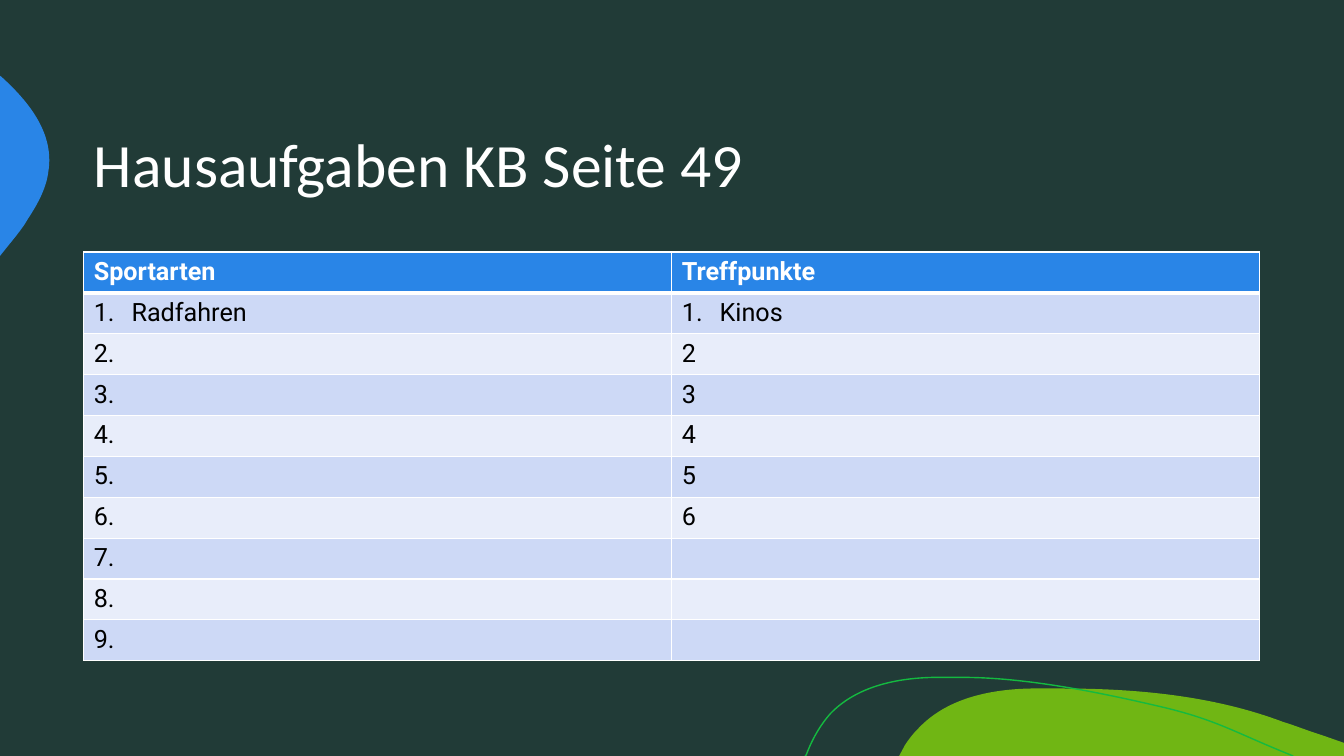
from lxml import etree
from pptx import Presentation
from pptx.dml.color import RGBColor
from pptx.enum.text import MSO_ANCHOR, MSO_AUTO_SIZE, PP_ALIGN
from pptx.oxml.ns import qn
from pptx.util import Cm, Pt

MIDDLE = MSO_ANCHOR.MIDDLE
NO_FIT = MSO_AUTO_SIZE.NONE
LEFT = PP_ALIGN.LEFT
TITLE_ONLY = 5
MARGIN = 2.11
CONTENT_WIDTH = 29.64
ROW_HEIGHT = 1.03

WHITE, BLACK = "FFFFFF", "000000"
DARK_GREEN, LIME, GREEN = "213B37", "70B614", "14BA40"
BLUE, BAND_DARK, BAND_LIGHT = "2985E7", "CDD9F6", "E8EDFA"

HEADER = ("Sportarten", "Treffpunkte")
FIRST_ENTRIES = ("Radfahren", "Kinos")
LAST_NUMBERS = (9, 6)
NUMBER_ENDINGS = (".", "")

LIME_HILL = [
    (26.77, 17.35), (28.65, 17.35, 30.58, 17.53, 32.33, 18.19),
    (32.66, 18.29, 32.97, 18.42, 33.3, 18.52), (33.87, 18.72),
    (33.87, 19.05), (22.66, 19.05), (22.81, 18.77),
    (22.91, 18.62, 23.01, 18.49, 23.14, 18.36),
    (23.85, 17.6, 24.94, 17.37, 25.98, 17.35),
    (26.24, 17.35, 26.5, 17.35, 26.77, 17.35),
]
BLUE_EDGE = [
    (0, 1.91), (0.03, 1.93), (0.76, 2.59, 1.37, 3.38, 1.22, 4.32),
    (1.17, 4.75, 0.94, 5.16, 0.69, 5.54),
    (0.61, 5.69, 0.43, 5.92, 0.2, 6.2), (0, 6.45),
]
GREEN_CURVE = [
    (20.29, 19.05), (20.32, 19.02),
    (20.47, 18.62, 20.68, 18.26, 20.93, 17.98),
    (21.59, 17.3, 22.58, 17.09, 23.52, 17.07), (24.26, 17.07),
    (25.96, 17.07, 27.94, 17.5, 29.34, 17.83),
    (30.71, 18.16, 31.14, 18.47, 32.59, 19.05),
]


def colour(value):
    return RGBColor.from_string(value)


def bend_segments(shape, segments):
    lines = list(shape._element.iter(qn("a:lnTo")))
    for line, segment in zip(lines, segments):
        if len(segment) == 2:
            continue
        curve = etree.Element(qn("a:cubicBezTo"))
        for x, y in zip(segment[::2], segment[1::2]):
            left, top = Cm(x) - shape.left, Cm(y) - shape.top
            etree.SubElement(curve, qn("a:pt"), x=str(left), y=str(top))
        line.getparent().replace(line, curve)


def add_outline(page, outline, fill=None, line=None):
    start, *segments = outline
    builder = page.shapes.build_freeform(Cm(start[0]), Cm(start[1]))
    anchors = [(Cm(segment[-2]), Cm(segment[-1])) for segment in segments]
    builder.add_line_segments(anchors, close=fill is not None)
    shape = builder.convert_to_shape()
    bend_segments(shape, segments)
    shape.shadow.inherit = False
    if fill:
        shape.fill.solid()
        shape.fill.fore_color.rgb = colour(fill)
    else:
        shape.fill.background()
    if line:
        shape.line.color.rgb = colour(line)
        shape.line.width = Pt(1)
    else:
        shape.line.fill.background()


def format_runs(para, font, size, hue, bold=False):
    for span in para.runs:
        span.font.name = font
        span.font.size = Pt(size)
        span.font.bold = bold
        span.font.color.rgb = colour(hue)


def add_title(page, text):
    title = page.shapes.title
    title.left, title.top = Cm(MARGIN), Cm(2.1)
    title.width, title.height = Cm(CONTENT_WIDTH), Cm(4.23)
    frame = title.text_frame
    frame.text = text
    frame.auto_size = NO_FIT
    frame.vertical_anchor = MIDDLE
    para = frame.paragraphs[0]
    para.alignment = LEFT
    para.line_spacing = 0.9
    format_runs(para, "Calibri", 44, WHITE)


def add_borders(cell, top, bottom):
    properties = cell._tc.get_or_add_tcPr()
    for tag, width in (("a:lnL", 1), ("a:lnR", 1), ("a:lnT", top), ("a:lnB", bottom)):
        border = etree.SubElement(properties, qn(tag), w=str(Pt(width)))
        fill = etree.SubElement(border, qn("a:solidFill"))
        etree.SubElement(fill, qn("a:srgbClr"), val=WHITE)


def number_paragraph(para):
    properties = para._p.get_or_add_pPr()
    properties.set("marL", str(Cm(0.95)))
    properties.set("indent", str(Cm(-0.95)))
    etree.SubElement(properties, qn("a:buFont"), typeface="+mj-lt")
    etree.SubElement(properties, qn("a:buAutoNum"), type="arabicPeriod")


def cell_text(row, column):
    if row == 0:
        return HEADER[column]
    if row == 1:
        return FIRST_ENTRIES[column]
    return f"{row}{NUMBER_ENDINGS[column]}" if row <= LAST_NUMBERS[column] else ""


def fill_cell(cell, row, column):
    header = row == 0
    add_borders(cell, 3 if row == 1 else 1, 3 if header else 1)
    cell.fill.solid()
    band = BAND_DARK if row % 2 else BAND_LIGHT
    cell.fill.fore_color.rgb = colour(BLUE if header else band)
    text = cell_text(row, column)
    if not text:
        return
    cell.text_frame.text = text
    para = cell.text_frame.paragraphs[0]
    if row == 1:
        number_paragraph(para)
    format_runs(para, "Roboto", 18, WHITE if header else BLACK, header)


def add_homework_table(page):
    rows, columns = max(LAST_NUMBERS) + 1, len(HEADER)
    table = page.shapes.add_table(
        rows, columns, Cm(MARGIN), Cm(6.35), Cm(CONTENT_WIDTH), Cm(rows * ROW_HEIGHT)
    ).table
    for row in range(rows):
        for column in range(columns):
            fill_cell(table.cell(row, column), row, column)


def main():
    deck = Presentation()
    deck.slide_width, deck.slide_height = Cm(33.87), Cm(19.05)
    page = deck.slides.add_slide(deck.slide_layouts[TITLE_ONLY])
    page.background.fill.solid()
    page.background.fill.fore_color.rgb = colour(DARK_GREEN)
    add_outline(page, LIME_HILL, fill=LIME)
    add_outline(page, BLUE_EDGE, fill=BLUE)
    add_outline(page, GREEN_CURVE, line=GREEN)
    add_title(page, "Hausaufgaben KB Seite 49")
    add_homework_table(page)
    deck.save("out.pptx")


if __name__ == "__main__":
    main()
